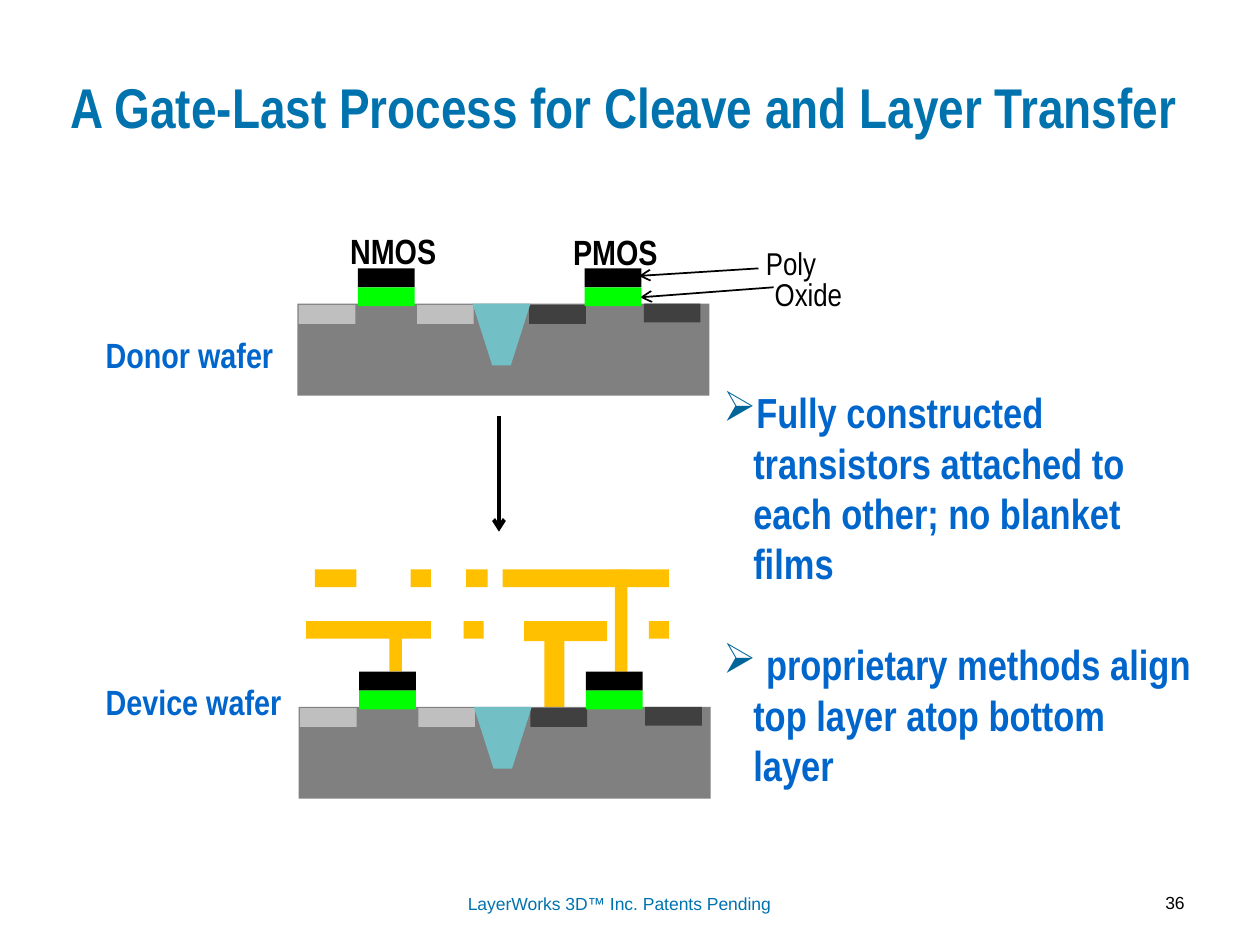
from typing import NamedTuple

from lxml import etree
from pptx import Presentation
from pptx.dml.color import RGBColor
from pptx.enum import shapes, text
from pptx.oxml import ns
from pptx.util import Emu, Inches, Pt

COLUMNS, ROWS = 100, 75
WIDTH, HEIGHT = Inches(10), Inches(7.5)
BLUE, TITLE_BLUE, BLACK, GOLD = "0066CC", "0073AE", "000000", "FFC000"
LIGHT, DARK, GREEN = "BFBFBF", "404040", "00FF00"
RECT = shapes.MSO_SHAPE.RECTANGLE
LEFT, CENTER, RIGHT = text.PP_ALIGN.LEFT, text.PP_ALIGN.CENTER, text.PP_ALIGN.RIGHT


class Area(NamedTuple):
    """Left, top, width and height in grid columns and rows."""
    column: float
    row: float
    columns: float
    rows: float


class Label(NamedTuple):
    """Text with its area and format."""
    words: tuple[str, ...]
    area: Area
    size: float
    color: str
    bold: bool = True
    font: str = "Arial Narrow"
    align: int = LEFT
    bullet: str = ""


class Arrow(NamedTuple):
    """Start and end points in grid units, with line width in points."""
    start: tuple[float, float]
    end: tuple[float, float]
    weight: float


class Part(NamedTuple):
    """A filled block of a wafer or of its wiring."""
    area: Area
    color: str


LABELS = (
    Label(("LayerWorks 3D™ Inc. Patents Pending",), Area(33.3, 70.4, 31.7, 2.6),
          10, TITLE_BLUE, False, "Arial", CENTER),
    Label(("36",), Area(83.9, 70.3, 11.1, 3.3), 10, BLACK, False, "Arial", RIGHT),
    Label(("Fully constructed transistors attached to each other; no blanket films",
           " proprietary methods align top layer atop bottom layer"),
          Area(56.4, 30.2, 39.2, 25.2), 24, BLUE, bullet="➢"),
    Label(("Device wafer",), Area(7.4, 53.5, 17.6, 4.4), 20, BLUE),
    Label(("Donor wafer",), Area(7.4, 26, 17.6, 4.4), 20, BLUE),
    Label(("A Gate-Last Process for Cleave and Layer Transfer",),
          Area(4.6, 5.3, 90.8, 6.4), 32, TITLE_BLUE),
    Label(("NMOS",), Area(26.8, 17.7, 9.5, 4.4), 20, BLACK),
    Label(("PMOS",), Area(44.5, 17.8, 9.6, 4.4), 20, BLACK),
    Label(("Poly",), Area(59.8, 18.9, 11.2, 4), 18, BLACK, False),
    Label(("Oxide",), Area(60.5, 21.3, 10.5, 4), 18, BLACK, False),
)
ARROWS = (
    Arrow((39.6, 33), (39.6, 42.2), 2.25),
    Arrow((60.2, 21.3), (50.7, 21.9), 1),
    Arrow((61.4, 22.8), (50.8, 23.6), 1),
)
UPPER_WIRES = ((25, 3.3), (32.6, 1.6), (37, 1.7), (39.9, 11.6), (51.5, 1.6))
LOWER_WIRES = ((24.3, 9.9), (36.8, 1.6), (51.5, 1.6))
WIRING = (
    *(Part(Area(column, row, columns, 1.4), GOLD)
      for row, wires in ((45.2, UPPER_WIRES), (49.3, LOWER_WIRES))
      for column, columns in wires),
    Part(Area(41.6, 49.3, 6.6, 1.6), GOLD),
    Part(Area(30.9, 50.6, 1, 2.7), GOLD),
    Part(Area(48.8, 45.2, 1, 8.1), GOLD),
    Part(Area(43.2, 49.3, 1.6, 6.8), GOLD),
)
BLOCKS = ((0.1, 0.1, LIGHT), (9.5, 0.1, LIGHT), (18.4, 0.1, DARK), (27.5, 0, DARK),
          *((column, row, color) for row, color in ((-1.3, GREEN), (-2.8, BLACK))
            for column in (4.8, 22.8)))
WAFER = (Part(Area(0, 0, 32.7, 7.3), "808080"),
         *(Part(Area(column, row, 4.5, 1.5), color) for column, row, color in BLOCKS))
TRENCH = Part(Area(13.9, 0, 4.6, 4.9), "72BFC5")


def across(columns: float) -> Emu:
    """Turn grid columns into a length."""
    return Emu(round(WIDTH * columns / COLUMNS))


def down(rows: float) -> Emu:
    """Turn grid rows into a length."""
    return Emu(round(HEIGHT * rows / ROWS))


def place(area: Area) -> tuple[Emu, Emu, Emu, Emu]:
    """Turn a grid area into slide lengths."""
    return across(area.column), down(area.row), across(area.columns), down(area.rows)


def paint(target, color: str) -> None:
    """Give a fill, line or font a hex colour."""
    if hasattr(target, "solid"):
        target.solid()
        target.fore_color.rgb = RGBColor.from_string(color)
    else:
        target.color.rgb = RGBColor.from_string(color)


def assign(target, values: dict) -> None:
    """Set attributes from a dict of format values."""
    for name, value in values.items():
        setattr(target, name, value)


def add_element(parent, tag: str, **attributes: str):
    """Append a drawing element to its parent."""
    return etree.SubElement(parent, ns.qn(tag), attributes)


def draw_part(page, part: Part, kind=RECT, column: float = 0, row: float = 0):
    """Draw a block, moved by the given columns and rows."""
    area = part.area._replace(column=part.area.column + column, row=part.area.row + row)
    block = page.shapes.add_shape(kind, *place(area))
    block.shadow.inherit = False
    paint(block.fill, part.color)
    block.line.fill.background()
    return block


def draw_wafer(page, column: float, row: float) -> None:
    """Draw a wafer with its two transistors and the trench between them."""
    for part in WAFER:
        draw_part(page, part, RECT, column, row)
    trench = draw_part(page, TRENCH, shapes.MSO_SHAPE.TRAPEZOID, column, row)
    trench.adjustments[0] = 0.34
    trench.rotation = 180


def draw_arrow(page, arrow: Arrow) -> None:
    """Draw a line with an open arrowhead at its end."""
    (column, row), (end_column, end_row) = arrow.start, arrow.end
    line = page.shapes.add_connector(shapes.MSO_CONNECTOR.STRAIGHT, across(column),
                                     down(row), across(end_column), down(end_row))
    paint(line.line, BLACK)
    line.line.width = Pt(arrow.weight)
    add_element(line.line._get_or_add_ln(), "a:tailEnd", type="arrow")
    add_element(line._element.spPr, "a:effectLst")


def add_bullet(para, bullet: str) -> None:
    """Give a paragraph a hanging bullet."""
    properties = para._p.get_or_add_pPr()
    properties.set("marL", str(across(2.4)))
    properties.set("indent", str(-across(2.4)))
    add_element(add_element(properties, "a:buClr"), "a:srgbClr", val="006699")
    add_element(properties, "a:buChar", char=bullet)


def draw_label(page, label: Label) -> None:
    """Draw a text box, with a line's gap between paragraphs."""
    box = page.shapes.add_textbox(*place(label.area))
    assign(box.text_frame, {"word_wrap": True, "vertical_anchor": text.MSO_ANCHOR.TOP})
    for number, words in enumerate(label.words):
        para = box.text_frame.add_paragraph() if number else box.text_frame.paragraphs[0]
        if label.bullet:
            add_bullet(para, label.bullet)
        assign(para, {"alignment": label.align,
                      "space_before": Pt(label.size * 1.2 if number else 0)})
        span = para.add_run()
        span.text = words
        assign(span.font, {"size": Pt(label.size), "bold": label.bold, "name": label.font})
        paint(span.font.fill, label.color)


def main() -> None:
    """Build the slide and save it."""
    deck = Presentation()
    assign(deck, {"slide_width": WIDTH, "slide_height": HEIGHT})
    page = deck.slides.add_slide(deck.slide_layouts[6])
    for part in WIRING:
        draw_part(page, part)
    for label in LABELS:
        draw_label(page, label)
    for arrow in ARROWS:
        draw_arrow(page, arrow)
    for column, row in ((23.6, 24.1), (23.7, 56.1)):
        draw_wafer(page, column, row)
    deck.save("out.pptx")


if __name__ == "__main__":
    main()
